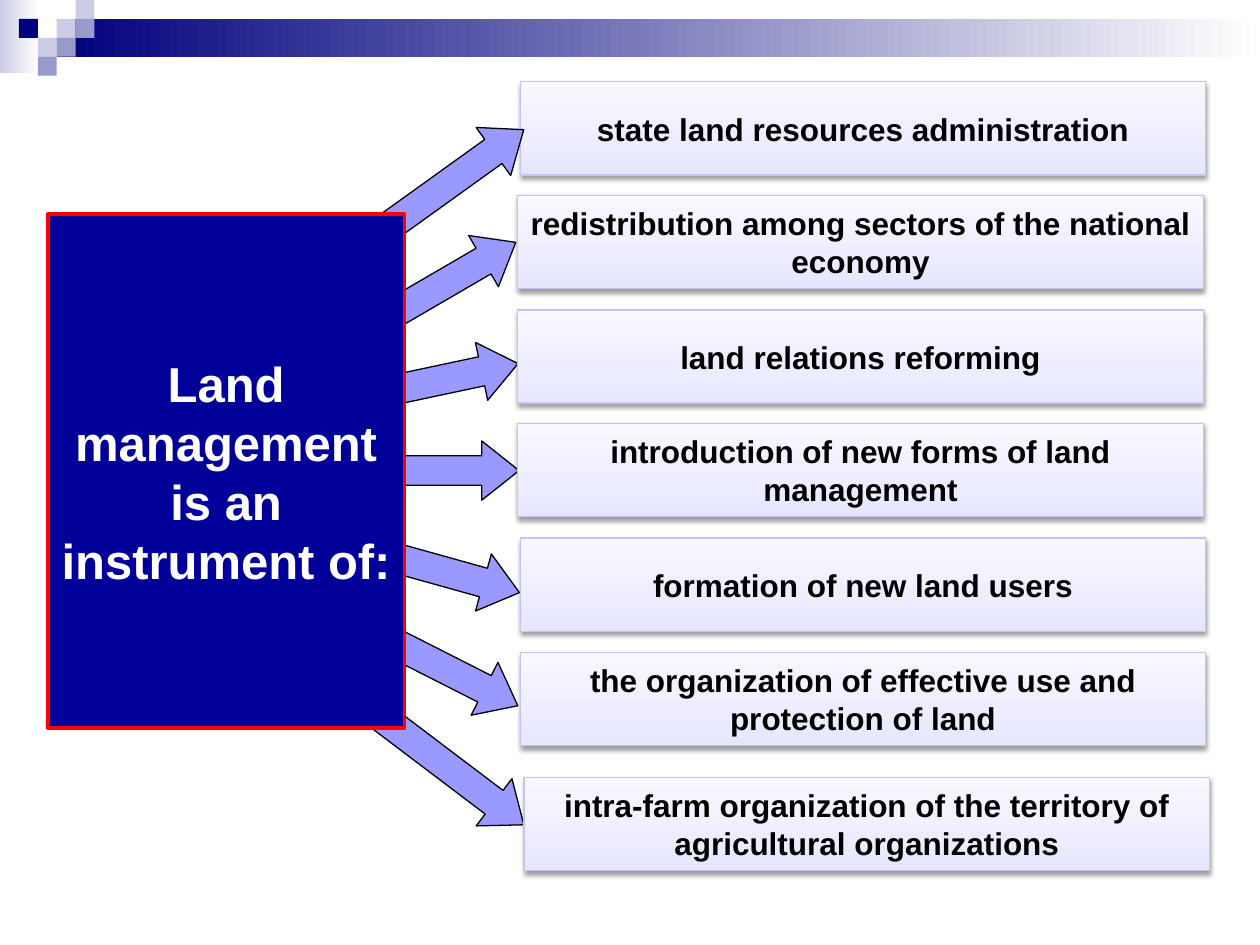
from dataclasses import dataclass

from lxml.etree import SubElement
from pptx import Presentation
from pptx.dml.color import RGBColor
from pptx.enum.shapes import MSO_SHAPE as Shape
from pptx.enum.text import MSO_ANCHOR as Anchor, PP_ALIGN as Align
from pptx.oxml.ns import qn
from pptx.util import Pt

PX = 9144  # EMU per px, 100 px to the inch


@dataclass(frozen=True)
class Theme:
    font: str = "Arial"
    heading_size: int = 28
    item_size: int = 18
    black: str = "000000"
    white: str = "FFFFFF"
    navy: str = "00007D"
    pale: str = "CCCCE6"
    mid: str = "9999CC"
    arrow: str = "9999FF"
    heading_fill: str = "000099"
    heading_line: str = "FF0000"
    item_line: str = "C4C4FB"
    item_stops: tuple = ((0, "E6E6FF"), (35, "EDEDFF"), (100, "F8F8FF"))


THEME = Theme()

ITEMS = [  # left, top within the list, text
    (2, 0, "state land resources administration"),
    (0, 90, "redistribution among sectors of the national economy"),
    (0, 181, "land relations reforming"),
    (0, 271, "introduction of new forms of land management"),
    (2, 362, "formation of new land users"),
    (2, 453, "the organization of effective use and protection of land"),
    (5, 552, "intra-farm organization of the territory of agricultural organizations"),
]
TOP_ARROW = (28, 0, 324.3)  # left, top within the fan, rotation
ARROWS = [
    (15, 79, 329.8), (2, 137, 348), (0, 195, 0),
    (5, 257, 15.6), (13, 323, 26.9), (30, 398, 37.1),
]


def add_gradient(shape, stops, angle):
    shape.fill.gradient()
    shape.fill.gradient_angle = (360 - angle) % 360
    stop_list = shape._element.spPr.find(qn("a:gradFill")).find(qn("a:gsLst"))
    for stop in list(stop_list):
        stop_list.remove(stop)
    for position, color in stops:
        stop = SubElement(stop_list, qn("a:gs"), pos=str(position * 1000))
        SubElement(stop, qn("a:srgbClr"), val=color)


def add_shadow(shape):
    effects = shape._element.spPr.find(qn("a:effectLst"))
    shadow = SubElement(effects, qn("a:outerShdw"), blurRad=str(Pt(3.1)),
                        dist=str(Pt(1.6)), dir="5400000", rotWithShape="0")
    color = SubElement(shadow, qn("a:srgbClr"), val=THEME.black)
    SubElement(color, qn("a:alpha"), val="38000")


def add_box(page, box, fill=None, stops=None, angle=0, line=None, weight=0.75,
            kind=Shape.RECTANGLE):
    shape = page.shapes.add_shape(kind, *(value * PX for value in box))
    shape.shadow.inherit = False
    if stops:
        add_gradient(shape, stops, angle)
    else:
        shape.fill.solid()
        shape.fill.fore_color.rgb = RGBColor.from_string(fill)
    if line:
        shape.line.color.rgb = RGBColor.from_string(line)
        shape.line.width = Pt(weight)
    else:
        shape.line.fill.background()
    return shape


def write_text(shape, text, size, color, bold=True):
    frame = shape.text_frame
    frame.word_wrap = True
    frame.vertical_anchor = Anchor.MIDDLE
    para = frame.paragraphs[0]
    para.alignment = Align.CENTER
    span = para.add_run()
    span.text = text
    span.font.name = THEME.font
    span.font.size = Pt(size)
    span.font.bold = bold
    span.font.color.rgb = RGBColor.from_string(color)


def add_banner(page, left, top, width, height):
    """Faded bands with a mosaic of small squares."""
    cell = 15
    add_box(page, (left, top, 31, height),
            stops=((0, THEME.pale), (100, THEME.white)))
    add_box(page, (left + 3 * cell, top + cell, width - 3 * cell, 2 * cell),
            stops=((0, THEME.navy), (100, THEME.white)))
    for column, row, color in [
        (3, 1, THEME.pale), (4, 0, THEME.pale), (4, 1, THEME.mid),
        (2, 2, THEME.pale), (1, 1, THEME.navy), (3, 2, THEME.mid),
        (2, 3, THEME.mid),
    ]:
        add_box(page, (left + column * cell, top + row * cell, cell, cell), color)


def add_arrows(page, left, top, width, height, arrows):
    """Fan of arrows, each of the given width and height."""
    for x, y, rotation in arrows:
        arrow = add_box(page, (left + x, top + y, width, height), THEME.arrow,
                        line=THEME.black, kind=Shape.NOTCHED_RIGHT_ARROW)
        arrow.adjustments[0] = 0.5
        arrow.adjustments[1] = 0.63
        arrow.rotation = rotation


def add_items(page, left, top, width, height):
    """List of purposes, each box of the given width and height."""
    for x, y, text in ITEMS:
        item = add_box(page, (left + x, top + y, width, height),
                       stops=THEME.item_stops, angle=270, line=THEME.item_line)
        add_shadow(item)
        write_text(item, text, THEME.item_size, THEME.black)


def add_heading(page, left, top, width, height):
    heading = add_box(page, (left, top, width, height), THEME.heading_fill,
                      line=THEME.heading_line, weight=2)
    write_text(heading, "Land management is an instrument of:",
               THEME.heading_size, THEME.white)


def main():
    deck = Presentation()
    deck.slide_width, deck.slide_height = 1000 * PX, 750 * PX
    page = deck.slides.add_slide(deck.slide_layouts[6])
    fan = (153, 155, 259, 47)
    add_banner(page, 0, 0, 1000, 58)
    add_arrows(page, *fan, ARROWS)
    add_items(page, 411, 65, 544, 74)
    # The top arrow overlaps its item; the heading covers every tail
    add_arrows(page, *fan, [TOP_ARROW])
    add_heading(page, 38, 170, 283, 408)
    deck.save("out.pptx")


if __name__ == "__main__":
    main()
